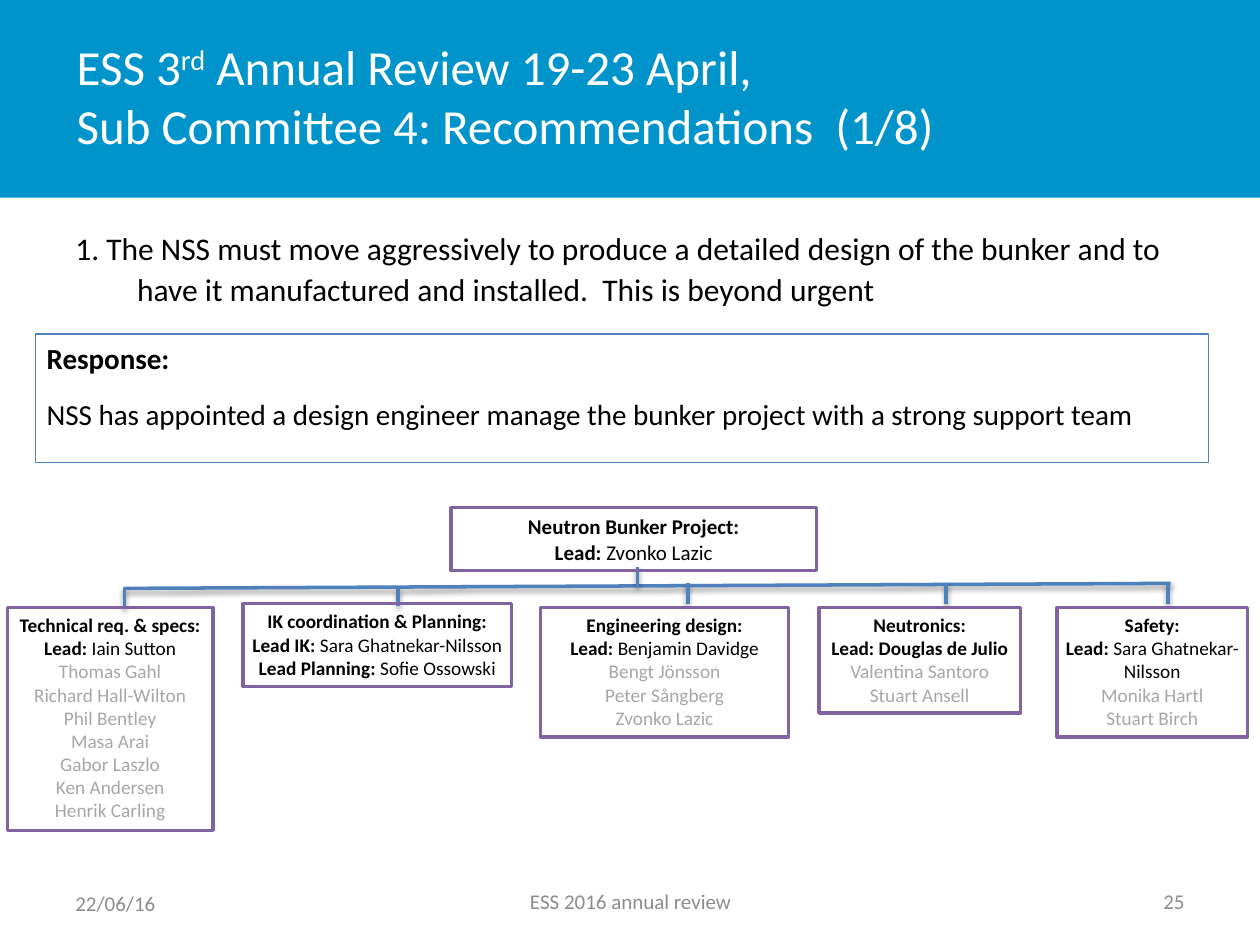
from lxml.etree import SubElement
from pptx import Presentation
from pptx.dml.color import RGBColor
from pptx.enum.shapes import MSO_CONNECTOR as Connector, MSO_SHAPE as Shape
from pptx.enum.text import MSO_ANCHOR as Anchor, MSO_AUTO_SIZE as AutoSize, PP_ALIGN as Align
from pptx.oxml.ns import qn
from pptx.util import Inches, Pt

WHITE = RGBColor(0xFF, 0xFF, 0xFF)
BLACK = RGBColor(0x00, 0x00, 0x00)
BANNER = RGBColor(0x00, 0x94, 0xCA)
BLUE = RGBColor(0x4F, 0x81, 0xBD)
PURPLE = RGBColor(0x80, 0x64, 0xA2)
FOOTER = RGBColor(0x8C, 0x8C, 0x8C)
MEMBER = RGBColor(0xA6, 0xA6, 0xA6)

deck = Presentation()
deck.slide_width, deck.slide_height = Inches(10), Inches(7.5)
page = deck.slides.add_slide(deck.slide_layouts[6])


def add_box(place, line=None, weight=None, inset=(0.1, 0.05), anchor=Anchor.TOP):
    lengths = [Inches(value) for value in place]
    if line is None:
        box = page.shapes.add_textbox(*lengths)
    else:
        box = page.shapes.add_shape(Shape.RECTANGLE, *lengths)
        box.shadow.inherit = False
        box.fill.background()
        box.line.color.rgb = line
        box.line.width = Pt(weight)
    side, edge = (Inches(value) for value in inset)
    frame_format = {
        "word_wrap": True, "vertical_anchor": anchor,
        "margin_left": side, "margin_right": side,
        "margin_top": edge, "margin_bottom": edge,
    }
    for name, value in frame_format.items():
        setattr(box.text_frame, name, value)
    return box


def write(box, lines, size, align=Align.LEFT, **para_format):
    frame = box.text_frame
    for index, spans in enumerate(lines):
        para = frame.add_paragraph() if index else frame.paragraphs[0]
        para.alignment = align
        for name, value in para_format.items():
            if index or name != "space_before":
                setattr(para, name, value)
        for text, bold, color in spans:
            span = para.add_run()
            span.text = text
            for name, value in {"name": "Calibri", "size": Pt(size), "bold": bold}.items():
                setattr(span.font, name, value)
            span.font.color.rgb = color
    return frame


banner = page.shapes.add_shape(Shape.RECTANGLE, 0, 0, Inches(10), Inches(1.57))
banner.shadow.inherit = False
banner.fill.solid()
banner.fill.fore_color.rgb = BANNER
banner.line.fill.background()

title_spans = [
    (text, False, WHITE)
    for text in ("ESS 3", "rd", " Annual Review 19-23 April,\vSub Committee 4: Recommendations  (1/8)")
]
first, second = title_spans[2][0].split("\v")
title = write(
    add_box((0.51, 0.13, 7.81, 1.25), anchor=Anchor.MIDDLE),
    [title_spans[:2] + [(first, False, WHITE)]], 28,
)
heading = title.paragraphs[0]
heading.runs[1].font._element.set("baseline", "30000")
heading.add_line_break()
span = heading.add_run()
span.text = second
for name, value in {"name": "Calibri", "size": Pt(28)}.items():
    setattr(span.font, name, value)
span.font.color.rgb = WHITE

recommendation = write(
    add_box((0.5, 1.75, 9, 1.06)),
    [[("1. The NSS must move aggressively to produce a detailed design of the bunker "
       "and to have it manufactured and installed.  This is beyond urgent", False, BLACK)]],
    18, line_spacing=1.07, space_after=Pt(8),
)
indent = recommendation.paragraphs[0]._p.get_or_add_pPr()
for name, value in {"marL": Inches(0.49), "indent": -Inches(0.49)}.items():
    indent.set(name, str(value))

for place, text, align in [
    ((0.5, 6.97, 2.33, 0.4), "22/06/16", Align.LEFT),
    ((7.17, 6.95, 2.33, 0.4), "25", Align.RIGHT),
    ((3.42, 6.95, 3.17, 0.4), "ESS 2016 annual review", Align.CENTER),
]:
    write(add_box(place, anchor=Anchor.MIDDLE), [[(text, False, FOOTER)]], 12, align)

write(
    add_box((0.28, 2.65, 9.31, 1.02), BLUE, 0.75, (0.09, 0.05)),
    [[("Response:", True, BLACK)],
     [("NSS has appointed a design engineer manage the bunker project "
       "with a strong support team", False, BLACK)]],
    16.6, space_before=Pt(12),
)

drops = [(5.06, 4.5, 4.66), (0.99, 4.67, 4.83), (3.16, 4.67, 4.81)]
drops += [(x, 4.63, 4.79) for x in (5.46, 7.51, 9.27)]
for ends in [(0.98, 4.67, 9.29, 4.63)] + [(x, top, x, bottom) for x, top, bottom in drops]:
    branch = page.shapes.add_connector(Connector.STRAIGHT, *(Inches(value) for value in ends))
    branch.line.color.rgb = BLUE
    branch.line.width = Pt(2)
    effects = SubElement(branch._element.spPr, qn("a:effectLst"))
    shadow = SubElement(
        effects, qn("a:outerShdw"), blurRad=str(Pt(3)), dist=str(Pt(1.6)),
        dir="5400000", rotWithShape="0",
    )
    shade = SubElement(shadow, qn("a:srgbClr"), val="000000")
    SubElement(shade, qn("a:alpha"), val="38000")

teams = [
    ((3.58, 4.03, 2.9, 0.5), 12, "Neutron Bunker Project:", [("Lead: ", "Zvonko Lazic")], []),
    ((1.93, 4.79, 2.13, 0.66), 11, "IK coordination & Planning:",
     [("Lead IK: ", "Sara Ghatnekar-Nilsson"), ("Lead Planning: ", "Sofie Ossowski")], []),
    ((4.29, 4.82, 1.97, 1.03), 11, "Engineering design:", [("Lead: ", "Benjamin Davidge")],
     ["Bengt Jönsson", "Peter Sångberg", "Zvonko Lazic"]),
    ((6.5, 4.82, 1.6, 0.84), 11, "Neutronics:", [("Lead: Douglas de Julio", "")],
     ["Valentina Santoro", "Stuart Ansell"]),
    ((8.39, 4.82, 1.51, 1.03), 11, "Safety:", [("Lead: ", "Sara Ghatnekar-Nilsson")],
     ["Monika Hartl", "Stuart Birch"]),
    ((0.06, 4.82, 1.63, 1.77), 11, "Technical req. & specs:", [("Lead: ", "Iain Sutton")],
     ["Thomas Gahl", "Richard Hall-Wilton", "Phil Bentley", "Masa Arai",
      "Gabor Laszlo", "Ken Andersen", "Henrik Carling"]),
]
for place, size, team, leads, members in teams:
    lines = [[(team, True, BLACK)]]
    for role, person in leads:
        lines.append([(role, True, BLACK)] + ([(person, False, BLACK)] if person else []))
    lines += [[(member, False, MEMBER)] for member in members]
    frame = write(add_box(place, PURPLE, 2, (0.05, 0.05)), lines, size, Align.CENTER)
    frame.auto_size = AutoSize.SHAPE_TO_FIT_TEXT

deck.save("out.pptx")
